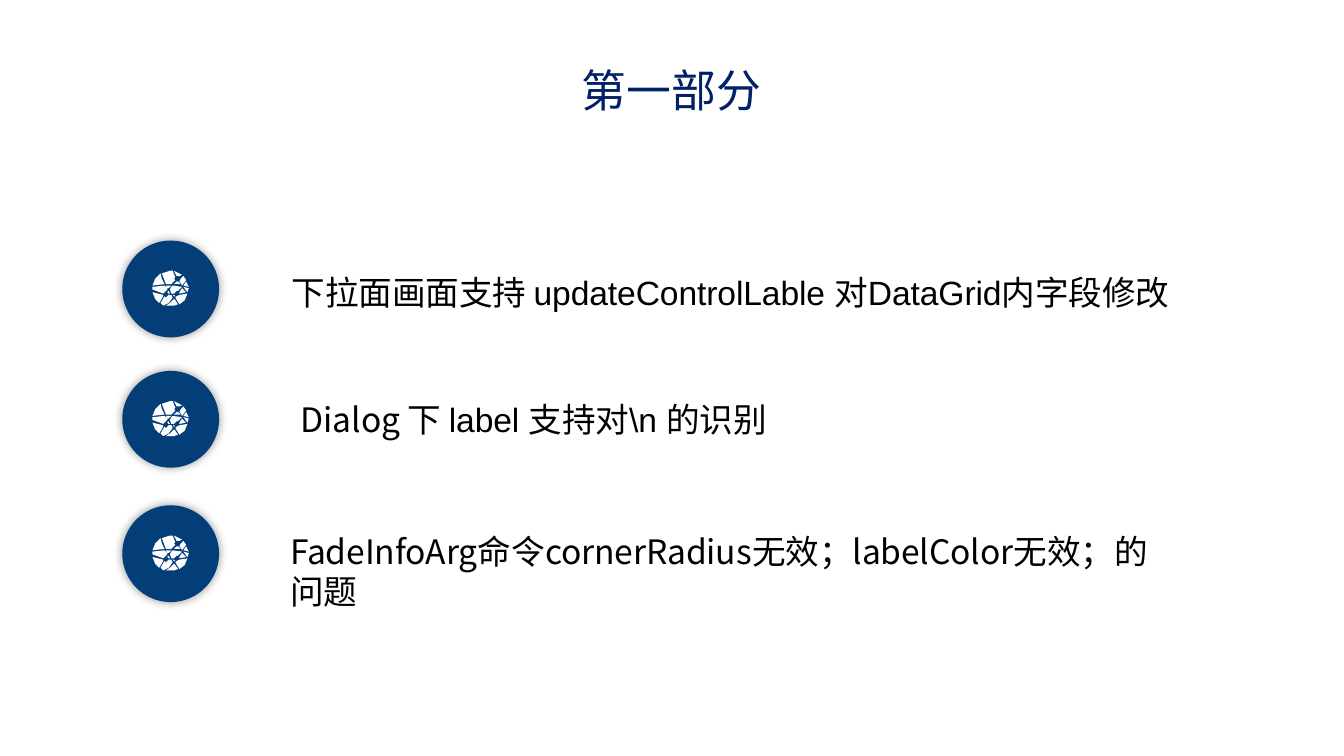
from lxml import etree
from pptx import Presentation
from pptx.dml.color import RGBColor
from pptx.enum.shapes import MSO_SHAPE
from pptx.enum.text import PP_ALIGN
from pptx.oxml.ns import qn
from pptx.util import Inches, Pt

OVAL = MSO_SHAPE.OVAL
LEFT, CENTER = PP_ALIGN.LEFT, PP_ALIGN.CENTER
ARIAL, NOTO = "Arial", "Noto Sans CJK SC"
NAVY, BLUE, BLACK, WHITE = "002166", "033E78", "000000", "FFFFFF"

PAGE_WIDTH = 10
PAGE_HEIGHT = PAGE_WIDTH * 9 / 16
BADGE_LEFT, BADGE_SIZE = 0.91, 0.72
GLOBE_UNIT = 0.01
GLOBE_PATCHES = [
    [(16, 21), (17, 22), (19, 25), (16, 26), (13, 26), (10, 26), (13, 24)],
    [(15, 18), (16, 18), (17, 19), (16, 19)],
    [(12, 18), (14, 18), (15, 20), (12, 24), (8, 26), (6, 24), (9, 19), (10, 20)],
    [(26, 17), (24, 22), (20, 25), (17, 20), (18, 19), (20, 18)],
    [(0, 16), (8, 18), (8, 19), (5, 24), (2, 21)],
    [(12, 15), (13, 17), (12, 17), (11, 16)],
    [(22, 13), (25, 16), (20, 17), (20, 16)],
    [(23, 12), (27, 13), (26, 16)],
    [(9, 11), (11, 13), (11, 14), (10, 15), (8, 17), (0, 14), (0, 12)],
    [(15, 11), (22, 12), (19, 15), (18, 15), (16, 17), (14, 17), (13, 14), (14, 12)],
    [(14, 11), (13, 12), (12, 13), (11, 13), (10, 11)],
    [(18, 8), (19, 8), (20, 9), (21, 10), (16, 10)],
    [(25, 8), (27, 12), (23, 11)],
    [(23, 4), (25, 7), (22, 11), (21, 9), (20, 8), (21, 6)],
    [(6, 2), (7, 6), (9, 10), (0, 11), (2, 6)],
    [(16, 0), (22, 3), (20, 4), (18, 4)],
    [(13, 0), (15, 0), (17, 5), (16, 6), (17, 7), (14, 10), (10, 10), (7, 2), (10, 1)],
]

TITLE_BOX = (3.66, 0.44, 2.67, 0.46)
ITEMS = [
    (1.79, (2.17, 2.02, 6.69, 0.3), 0, 0,
     [("下拉面画面支持 updateControlLable 对DataGrid内字段修改", ARIAL)]),
    (2.76, (2.14, 2.92, 5, 0.4), 0.1, 0.05,
     [("Dialog ", NOTO), ("下 label 支持对\\n 的识别", ARIAL)]),
    (3.76, (2.06, 3.9, 6.64, 0.71), 0.1, 0.05,
     [("FadeInfoArg命令cornerRadius无效；labelColor无效；的问题", NOTO)]),
]


def color(value):
    return RGBColor.from_string(value)


def paint(shape, fill):
    shape.fill.solid()
    shape.fill.fore_color.rgb = color(fill)
    shape.line.fill.background()
    shape.shadow.inherit = False


def add_glow(shape, blur, opacity):
    effects = shape._element.spPr.find(qn("a:effectLst"))
    shadow = etree.SubElement(effects, qn("a:outerShdw"), blurRad=str(Pt(blur)),
                              dist="0", dir="0", algn="ctr", rotWithShape="0")
    tint = etree.SubElement(shadow, qn("a:srgbClr"), val=BLACK)
    etree.SubElement(tint, qn("a:alpha"), val=str(opacity * 1000))


def add_text(page, box, spans, size, fill, align=LEFT, pad_x=0, pad_y=0, spacing=0):
    frame = page.shapes.add_textbox(*map(Inches, box)).text_frame
    frame.word_wrap = True
    frame.margin_left = frame.margin_right = Inches(pad_x)
    frame.margin_top = frame.margin_bottom = Inches(pad_y)
    para = frame.paragraphs[0]
    para.alignment = align
    para.font.size = Pt(size)
    para.font.color.rgb = color(fill)
    for words, face in spans:
        span = para.add_run()
        span.text = words
        span.font.name = face
        properties = span.font._element
        properties.set("spc", str(spacing))
        etree.SubElement(properties, qn("a:ea"), typeface=NOTO)


def add_globe(group, left, top):
    first, *others = GLOBE_PATCHES
    builder = group.shapes.build_freeform(*first[0], scale=Inches(GLOBE_UNIT))
    builder.add_line_segments(first[1:], close=True)
    for patch in others:
        builder.move_to(*patch[0])
        builder.add_line_segments(patch[1:], close=True)
    paint(builder.convert_to_shape(Inches(left), Inches(top)), WHITE)


def add_badge(page, left, top, size):
    group = page.shapes.add_group_shape()
    disc = group.shapes.add_shape(OVAL, *map(Inches, (left, top, size, size)))
    paint(disc, BLUE)
    add_glow(disc, 5, 40)
    inset = (size - 27 * GLOBE_UNIT) / 2
    add_globe(group, left + inset, top + inset)


def add_item(page, badge_top, box, pad_x, pad_y, spans):
    add_badge(page, BADGE_LEFT, badge_top, BADGE_SIZE)
    add_text(page, box, spans, 18, BLACK, pad_x=pad_x, pad_y=pad_y, spacing=-5)


def main():
    deck = Presentation()
    deck.slide_width, deck.slide_height = Inches(PAGE_WIDTH), Inches(PAGE_HEIGHT)
    page = deck.slides.add_slide(deck.slide_layouts[6])
    add_text(page, TITLE_BOX, [("第一部分", NOTO)], 24, NAVY, CENTER, 0.06, 0.03)
    for item in ITEMS:
        add_item(page, *item)
    deck.save("out.pptx")


if __name__ == "__main__":
    main()
